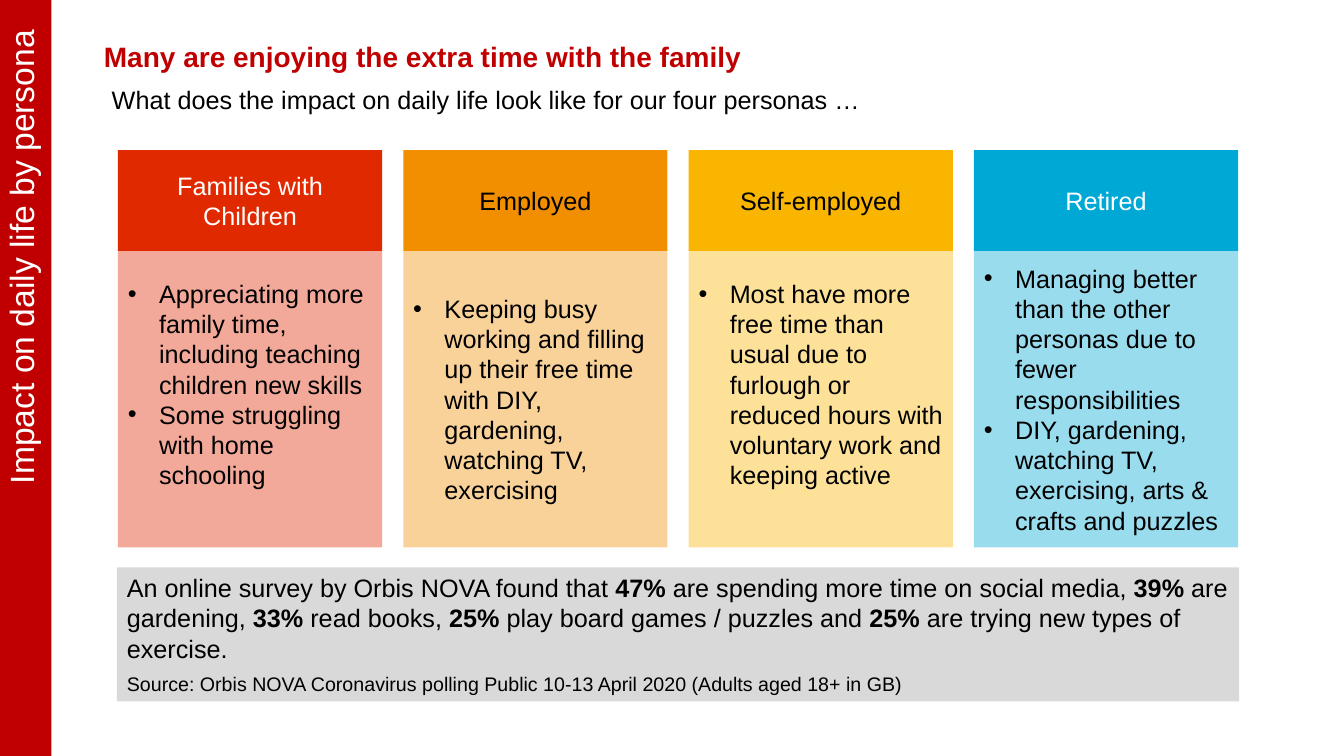
from dataclasses import dataclass

from lxml.etree import SubElement
from pptx import Presentation
from pptx.dml.color import RGBColor
from pptx.enum.shapes import MSO_SHAPE
from pptx.enum.text import MSO_ANCHOR, MSO_AUTO_SIZE, PP_ALIGN
from pptx.oxml.ns import qn
from pptx.shapes.autoshape import Shape
from pptx.slide import Slide
from pptx.text.text import TextFrame, _Paragraph as Paragraph
from pptx.util import Inches, Pt


@dataclass(frozen=True)
class Theme:
    font: str = "Arial"
    red: str = "C00000"
    black: str = "000000"
    white: str = "FFFFFF"
    grey: str = "D9D9D9"
    sidebar_size: int = 24
    title_size: int = 20
    body_size: int = 18
    source_size: int = 14
    tint_percent: int = 40


@dataclass(frozen=True)
class Persona:
    name: str
    color: str
    name_color: str
    points: tuple[str, ...]
    bottom_inset: float = 0.05


@dataclass(frozen=True)
class Area:
    left: float
    top: float
    width: float
    height: float


THEME = Theme()
FIRST_COLUMN = Area(1.17, 1.49, 2.62, 1)
COLUMN_STEP = 2.83
BODY_HEIGHT = 2.94
BULLET_INDENT = 0.31

PERSONAS = (
    Persona("Families with Children", "E12900", THEME.white, (
        "Appreciating more family time, including teaching children new skills",
        "Some struggling with home schooling",
    ), 0.35),
    Persona("Employed", "F28F00", THEME.black, (
        "Keeping busy working and filling up their free time with DIY, "
        "gardening, watching TV, exercising",
    )),
    Persona("Self-employed", "FAB500", THEME.black, (
        "Most have more free time than usual due to furlough or reduced hours "
        "with voluntary work and keeping active",
    ), 0.35),
    Persona("Retired", "00A8D6", THEME.white, (
        "Managing better than the other personas due to fewer responsibilities",
        "DIY, gardening, watching TV, exercising, arts & crafts and puzzles",
    )),
)

# Survey wording alternates between regular and bold spans.
SURVEY_SPANS = (
    "An online survey by Orbis NOVA found that ", "47% ",
    "are spending more time on social media, ", "39%",
    " are gardening, ", "33% ",
    "read books, ", "25% ",
    "play board games / puzzles and ", "25% ",
    "are trying new types of exercise.",
)
SOURCE = "Source: Orbis NOVA Coronavirus polling Public 10-13 April 2020 (Adults aged 18+ in GB)"


def add_span(para: Paragraph, text: str, size: int = THEME.body_size,
             color: str = THEME.black, bold: bool = False) -> None:
    span = para.add_run()
    span.text = text
    span.font.name = THEME.font
    span.font.size = Pt(size)
    span.font.bold = bold
    span.font.color.rgb = RGBColor.from_string(color)


def set_insets(frame: TextFrame, left: float, top: float, right: float, bottom: float) -> None:
    frame.margin_left, frame.margin_top = Inches(left), Inches(top)
    frame.margin_right, frame.margin_bottom = Inches(right), Inches(bottom)


def place(shape: Shape, area: Area) -> None:
    shape.left, shape.top = Inches(area.left), Inches(area.top)
    shape.width, shape.height = Inches(area.width), Inches(area.height)


def add_panel(page: Slide, area: Area, color: str,
              anchor: MSO_ANCHOR = MSO_ANCHOR.MIDDLE) -> Shape:
    """Add a borderless filled rectangle with wrapped, left-aligned text."""
    panel = page.shapes.add_shape(
        MSO_SHAPE.RECTANGLE, Inches(area.left), Inches(area.top),
        Inches(area.width), Inches(area.height))
    panel.shadow.inherit = False
    panel.fill.solid()
    panel.fill.fore_color.rgb = RGBColor.from_string(color)
    panel.line.fill.background()
    panel.text_frame.word_wrap = True
    panel.text_frame.vertical_anchor = anchor
    panel.text_frame.paragraphs[0].alignment = PP_ALIGN.LEFT
    return panel


def set_opacity(panel: Shape, percent: int) -> None:
    color = panel.element.spPr.find(qn("a:solidFill")).find(qn("a:srgbClr"))
    SubElement(color, qn("a:alpha")).set("val", str(percent * 1000))


def make_bullet(para: Paragraph) -> None:
    para.alignment = PP_ALIGN.LEFT
    properties = para._p.get_or_add_pPr()
    properties.set("marL", str(Inches(BULLET_INDENT)))
    properties.set("indent", str(-Inches(BULLET_INDENT)))
    SubElement(properties, qn("a:buFont")).set("typeface", THEME.font)
    SubElement(properties, qn("a:buChar")).set("char", "•")


def add_sidebar(page: Slide) -> None:
    sidebar = add_panel(page, Area(0, 0, 0.51, 7.5), THEME.red)
    frame = sidebar.text_frame
    set_insets(frame, 0.07, 0.3, 0.12, 0)
    sidebar.element.txBody.find(qn("a:bodyPr")).set("vert", "vert270")
    para = frame.paragraphs[0]
    para.alignment = PP_ALIGN.RIGHT
    para.line_spacing = 0.9
    add_span(para, "Impact on daily life by persona", THEME.sidebar_size, THEME.white)


def add_headings(page: Slide) -> None:
    title = page.shapes.title
    place(title, Area(0.93, 0.34, 11.97, 0.44))
    frame = title.text_frame
    frame.auto_size = MSO_AUTO_SIZE.NONE
    frame.vertical_anchor = MSO_ANCHOR.TOP
    frame.paragraphs[0].alignment = PP_ALIGN.LEFT
    add_span(frame.paragraphs[0], "Many are enjoying the extra time with the family",
             THEME.title_size, THEME.red, bold=True)

    subtitle = page.shapes.add_textbox(Inches(1.01), Inches(0.79), Inches(7.62), Inches(0.4))
    subtitle.text_frame.word_wrap = False
    add_span(subtitle.text_frame.paragraphs[0],
             "What does the impact on daily life look like for our four personas …")


def add_persona(page: Slide, persona: Persona, left: float) -> None:
    top, width, height = FIRST_COLUMN.top, FIRST_COLUMN.width, FIRST_COLUMN.height
    body = add_panel(page, Area(left, top + height, width, BODY_HEIGHT), persona.color)
    set_opacity(body, THEME.tint_percent)
    frame = body.text_frame
    frame.margin_bottom = Inches(persona.bottom_inset)
    for index, point in enumerate(persona.points):
        para = frame.add_paragraph() if index else frame.paragraphs[0]
        make_bullet(para)
        add_span(para, point)

    header = add_panel(page, Area(left, top, width, height), persona.color)
    para = header.text_frame.paragraphs[0]
    para.alignment = PP_ALIGN.CENTER
    add_span(para, persona.name, color=persona.name_color)


def add_survey(page: Slide) -> None:
    survey = add_panel(page, Area(1.16, 5.63, 11.13, 1.33), THEME.grey, MSO_ANCHOR.TOP)
    frame = survey.text_frame
    for index, text in enumerate(SURVEY_SPANS):
        add_span(frame.paragraphs[0], text, bold=index % 2 == 1)
    source = frame.add_paragraph()
    source.alignment = PP_ALIGN.LEFT
    source.space_before = Pt(6)
    add_span(source, SOURCE, THEME.source_size)


def main() -> None:
    deck = Presentation()
    deck.slide_width, deck.slide_height = Inches(13.33), Inches(7.5)
    page = deck.slides.add_slide(deck.slide_layouts.get_by_name("Title Only"))
    add_sidebar(page)
    add_headings(page)
    for index, persona in enumerate(PERSONAS):
        add_persona(page, persona, FIRST_COLUMN.left + index * COLUMN_STEP)
    add_survey(page)
    deck.save("out.pptx")


if __name__ == "__main__":
    main()
